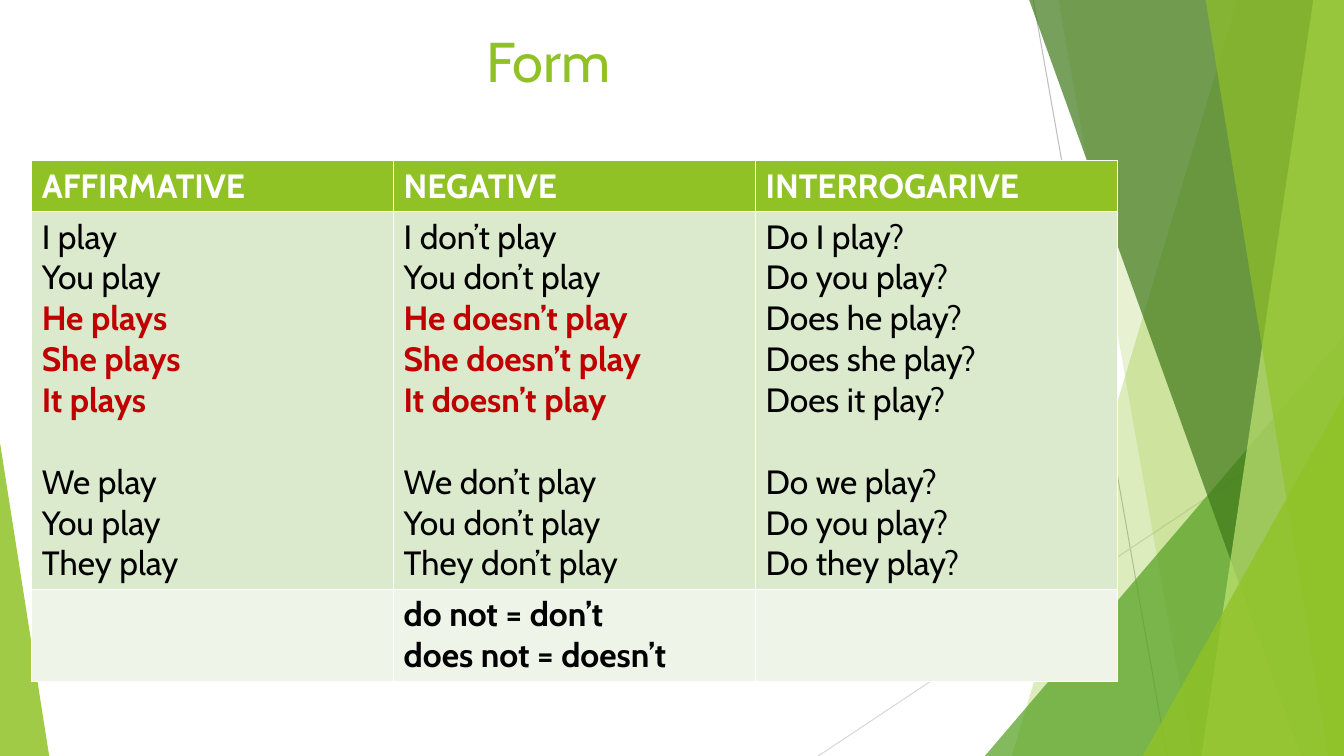
from lxml.etree import SubElement
from pptx import Presentation
from pptx.dml.color import RGBColor
from pptx.enum.shapes import MSO_CONNECTOR, MSO_SHAPE
from pptx.enum.text import MSO_ANCHOR, PP_ALIGN
from pptx.oxml.ns import qn
from pptx.util import Cm, Pt

WIDTH, HEIGHT = 33.87, 19.05
FONT = "Cabin"
GREEN, RED, BLACK, WHITE = "90C226", "C00000", "000000", "FFFFFF"
LINE_PITCH = 29.2

HEADINGS = ["AFFIRMATIVE", "NEGATIVE", "INTERROGARIVE"]
SINGULAR = [
    ["I play", "You play", "He plays", "She plays", "It plays"],
    ["I don’t play", "You don’t play", "He doesn’t play", "She doesn’t play", "It doesn’t play"],
    ["Do I play?", "Do you play?", "Does he play?", "Does she play?", "Does it play?"],
]
PLURAL = [
    ["We play", "You play", "They play"],
    ["We don’t play", "You don’t play", "They don’t play"],
    ["Do we play?", "Do you play?", "Do they play?"],
]
SHORT_FORMS = [[], ["do not = don’t", "does not = doesn’t"], []]
ROW_HEIGHTS = [1.28, 9.49, 2.31]


def colour(value):
    return RGBColor.from_string(value)


def fill_glass(shape, value, opacity):
    shape.shadow.inherit = False
    shape.line.fill.background()
    shape.fill.solid()
    shape.fill.fore_color.rgb = colour(value)
    tint = shape._element.spPr.find(qn("a:solidFill"))[0]
    SubElement(tint, qn("a:alpha")).set("val", str(opacity * 1000))


def add_ray(page, start, end, value):
    ray = page.shapes.add_connector(
        MSO_CONNECTOR.STRAIGHT, *[Cm(length) for length in start + end])
    ray.line.color.rgb = colour(value)
    ray.line.width = Pt(0.75)
    SubElement(ray._element.spPr, qn("a:effectLst"))


def add_facet(page, top, bottom, value, opacity):
    builder = page.shapes.build_freeform(Cm(top), Cm(-0.02))
    corners = [(WIDTH, -0.02), (WIDTH, HEIGHT), (bottom, HEIGHT)]
    builder.add_line_segments([(Cm(x), Cm(y)) for x, y in corners])
    fill_glass(builder.convert_to_shape(), value, opacity)


def add_wedge(page, left, top, width, peak, opacity, value=GREEN):
    wedge = page.shapes.add_shape(
        MSO_SHAPE.ISOSCELES_TRIANGLE, Cm(left), Cm(top), Cm(width), Cm(HEIGHT - top))
    wedge.adjustments[0] = peak
    fill_glass(wedge, value, opacity)


def add_backdrop(page):
    add_ray(page, (26.04, 0), (29.41, HEIGHT), "BFBFBF")
    add_ray(page, (WIDTH, 10.24), (20.62, HEIGHT), "D9D9D9")
    add_facet(page, 31.19, 25.5, GREEN, 30)
    add_facet(page, 26.67, 30.05, GREEN, 20)
    add_wedge(page, 24.82, 8.46, 9.05, 1, 72, "54A021")
    add_facet(page, 25.93, 32.79, "3F7819", 70)
    add_facet(page, 33.1, 30.28, "C0E474", 70)
    add_facet(page, 30.38, 33.48, GREEN, 65)
    add_wedge(page, 28.8, 9.98, 5.07, 1, 80)
    add_wedge(page, 0, 11.15, 1.24, 0, 85)


def style(para, size, value, bold=False):
    font = para.font
    font.name, font.size, font.bold = FONT, Pt(size), bold
    font.color.rgb = colour(value)


def place_title(page, text):
    title = page.shapes.title
    title.left, title.top, title.width, title.height = Cm(1.88), Cm(0.36), Cm(23.88), Cm(2.31)
    title.text_frame.text = text
    title.text_frame.vertical_anchor = MSO_ANCHOR.MIDDLE
    para = title.text_frame.paragraphs[0]
    para.alignment = PP_ALIGN.CENTER
    style(para, 40, GREEN)
    tree = title._element.getparent()
    tree.append(title._element)


def fill_cell(cell, lines, background, value=BLACK, bold=False):
    cell.fill.solid()
    cell.fill.fore_color.rgb = colour(background)
    cell.text = "\n".join(lines)
    for para in cell.text_frame.paragraphs:
        style(para, 24, value, bold)


def mark_third_person(cell):
    for para in cell.text_frame.paragraphs[2:5]:
        style(para, 24, RED, True)


def add_forms_table(page):
    table = page.shapes.add_table(
        3, 3, Cm(0.8), Cm(4.05), Cm(27.36), Cm(sum(ROW_HEIGHTS))).table
    for row, height in zip(table.rows, ROW_HEIGHTS):
        row.height = Cm(height)
    for column, heading in enumerate(HEADINGS):
        fill_cell(table.cell(0, column), [heading], GREEN, WHITE, True)
        forms = table.cell(1, column)
        fill_cell(forms, SINGULAR[column] + PLURAL[column], "DBE9CD")
        first_plural = forms.text_frame.paragraphs[len(SINGULAR[column])]
        first_plural.space_before = Pt(LINE_PITCH)
        fill_cell(table.cell(2, column), SHORT_FORMS[column], "EEF4E8", bold=True)
    for column in range(2):
        mark_third_person(table.cell(1, column))


def main():
    deck = Presentation()
    deck.slide_width, deck.slide_height = Cm(WIDTH), Cm(HEIGHT)
    page = deck.slides.add_slide(deck.slide_layouts[5])
    add_backdrop(page)
    place_title(page, "Form")
    add_forms_table(page)
    deck.save("out.pptx")


if __name__ == "__main__":
    main()
